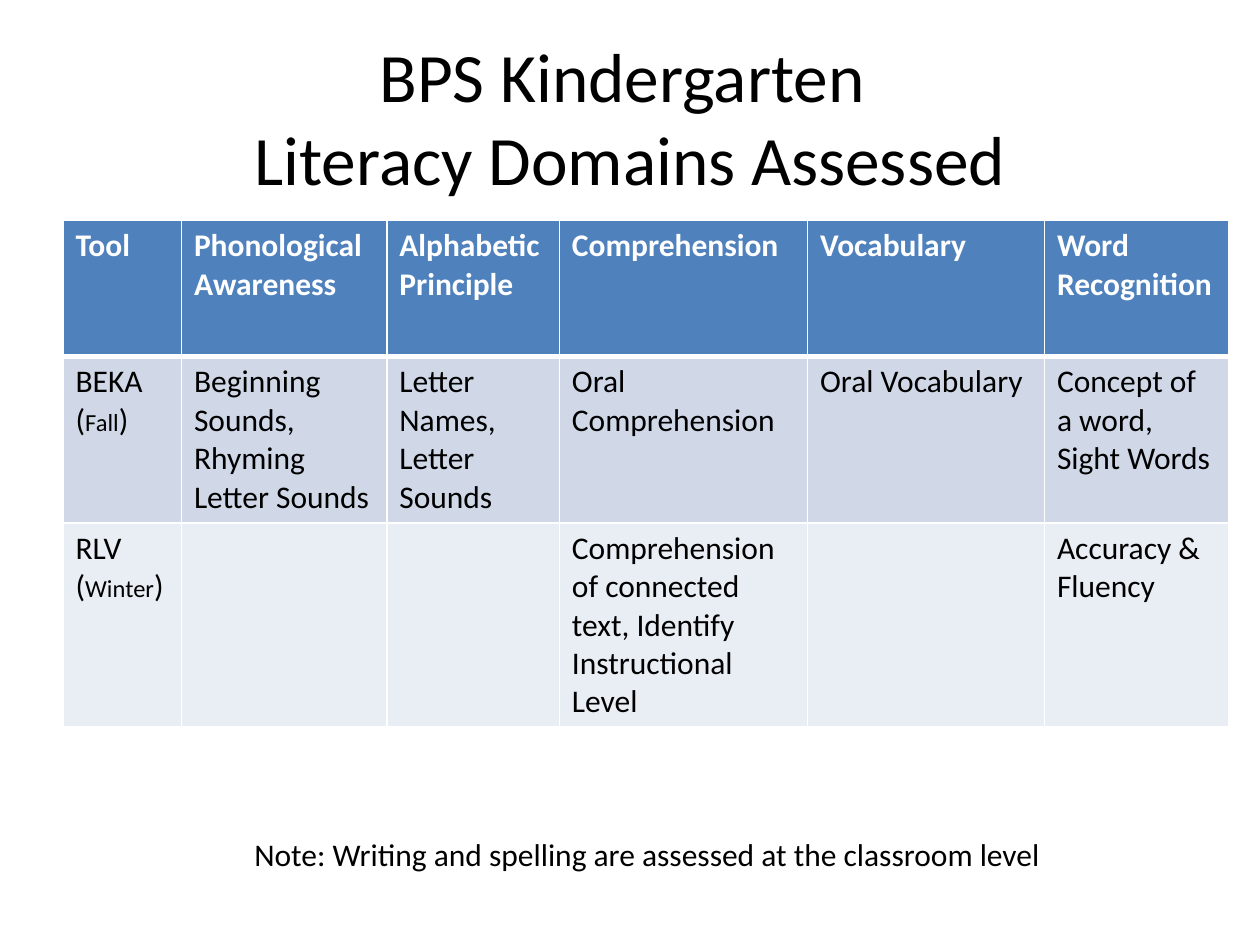
from lxml.etree import SubElement
from pptx import Presentation
from pptx.dml.color import RGBColor
from pptx.enum.text import MSO_ANCHOR as Anchor, PP_ALIGN as Align
from pptx.oxml.ns import qn
from pptx.util import Inches, Pt


def style(font, size, color="000000", bold=False):
    font.name = "Calibri"
    font.size = Pt(size)
    font.bold = bold
    font.color.rgb = RGBColor.from_string(color)


def add_border(cell, side, width):
    line = SubElement(cell._tc.get_or_add_tcPr(), qn("a:ln" + side), w=str(Pt(width)))
    fill = SubElement(line, qn("a:solidFill"))
    SubElement(fill, qn("a:srgbClr"), val="FFFFFF")


deck = Presentation()
deck.slide_width, deck.slide_height = Inches(10), Inches(7.5)
page = deck.slides.add_slide(deck.slide_layouts[6])

# Title
box = page.shapes.add_textbox(Inches(0.5), Inches(0.3), Inches(9), Inches(1.25))
frame = box.text_frame
frame.word_wrap = True
frame.vertical_anchor = Anchor.MIDDLE
frame.text = "BPS Kindergarten \vLiteracy Domains Assessed"
para = frame.paragraphs[0]
para.alignment = Align.CENTER
for span in para.runs:
    style(span.font, 39.6)

# Table of domains by tool; text between bars is set smaller
col_widths = [0.94, 1.63, 1.37, 1.97, 1.88, 1.46]
row_heights = [1.08, 1.32, 1.62]
row_fills = ["4F81BD", "D0D8E8", "E9EDF4"]
domains = [
    ["Tool", "Phonological Awareness", "Alphabetic Principle",
     "Comprehension", "Vocabulary", "Word Recognition"],
    ["BEKA\n(|Fall|)", "Beginning Sounds, Rhyming Letter Sounds",
     "Letter Names, Letter Sounds", "Oral Comprehension", "Oral Vocabulary",
     "Concept of a word, Sight Words"],
    ["RLV\n(|Winter|)", "", "",
     "Comprehension of connected text, Identify Instructional Level", "",
     "Accuracy & Fluency"],
]
table = page.shapes.add_table(
    len(row_heights), len(col_widths), Inches(0.5), Inches(1.75),
    Inches(sum(col_widths)), Inches(sum(row_heights))).table
for column, width in zip(table.columns, col_widths):
    column.width = Inches(width)

for r, texts in enumerate(domains):
    table.rows[r].height = Inches(row_heights[r])
    header = r == 0
    for c, text in enumerate(texts):
        cell = table.cell(r, c)
        # The rule under the header is thicker than the others
        for side, width in [("L", 1), ("R", 1), ("T", 3 if r == 1 else 1),
                            ("B", 3 if header else 1)]:
            add_border(cell, side, width)
        cell.fill.solid()
        cell.fill.fore_color.rgb = RGBColor.from_string(row_fills[r])
        for n, words in enumerate(text.split("\n")):
            frame = cell.text_frame
            para = frame.add_paragraph() if n else frame.paragraphs[0]
            for i, piece in enumerate(words.split("|")):
                if piece:
                    span = para.add_run()
                    span.text = piece
                    style(span.font, 14 if i == 1 else 18,
                          "FFFFFF" if header else "000000", header)

# Note
box = page.shapes.add_textbox(Inches(1.92), Inches(6.58), Inches(6.45), Inches(0.4))
box.text_frame.word_wrap = False
box.text_frame.text = "Note: Writing and spelling are assessed at the classroom level"
style(box.text_frame.paragraphs[0].runs[0].font, 18)

deck.save("out.pptx")
